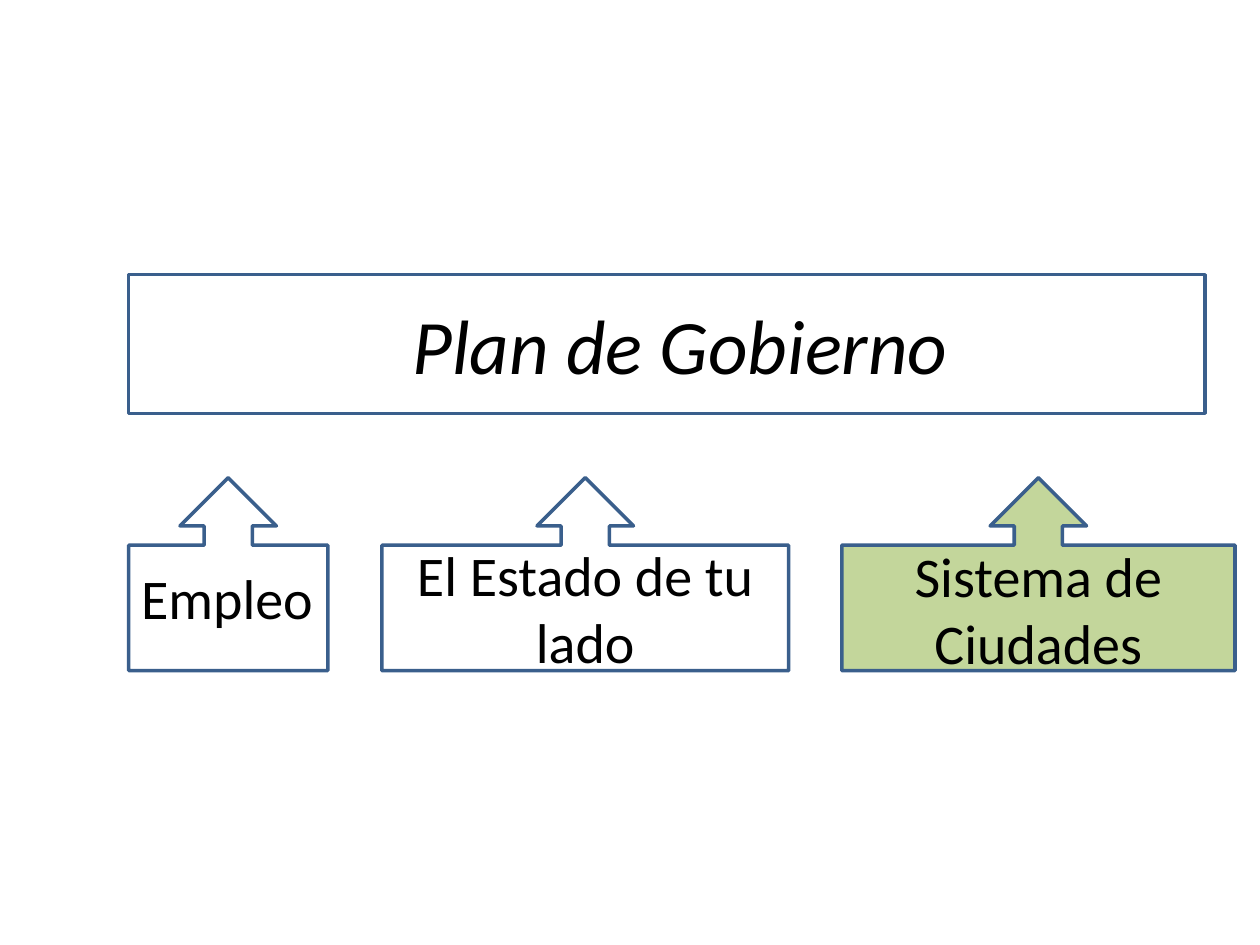
from pptx import Presentation
from pptx.dml.color import RGBColor
from pptx.enum.shapes import MSO_SHAPE
from pptx.enum.text import MSO_AUTO_SIZE, PP_ALIGN
from pptx.util import Pt

WHITE = RGBColor(0xFF, 0xFF, 0xFF)
BLACK = RGBColor(0x00, 0x00, 0x00)
GREEN = RGBColor(0xC3, 0xD6, 0x9B)
BLUE = RGBColor(0x3A, 0x5F, 0x8C)

presentation = Presentation()
presentation.slide_width = Pt(720)
presentation.slide_height = Pt(540)
slide = presentation.slides.add_slide(presentation.slide_layouts[6])


def add_outline(kind, left, top, width, height, fill):
    shape = slide.shapes.add_shape(kind, Pt(left), Pt(top), Pt(width), Pt(height))
    shape.shadow.inherit = False
    shape.fill.solid()
    shape.fill.fore_color.rgb = fill
    shape.line.color.rgb = BLUE
    shape.line.width = Pt(2)


def add_label(text, left, top, width, height, size, wrap=True, italic=False):
    text_box = slide.shapes.add_textbox(Pt(left), Pt(top), Pt(width), Pt(height))
    frame = text_box.text_frame
    frame.word_wrap = wrap
    frame.auto_size = MSO_AUTO_SIZE.SHAPE_TO_FIT_TEXT
    paragraph = frame.paragraphs[0]
    paragraph.text = text
    paragraph.alignment = PP_ALIGN.CENTER if wrap else PP_ALIGN.LEFT
    paragraph.font.name = "Calibri"
    paragraph.font.size = Pt(size)
    paragraph.font.italic = italic
    paragraph.font.color.rgb = BLACK


# Government plan on top
add_outline(MSO_SHAPE.RECTANGLE, 73.5, 157, 615, 79.2, WHITE)
add_label("Plan de Gobierno", 198.7, 166.3, 380, 60.5, 44, italic=True)

# Pillars pointing up to the plan: text, left, width, fill, label top, label height, wrap
pillars = [
    ("Empleo", 73.5, 113.8, WHITE, 318.2, 46, False),
    ("El Estado de tu lado", 218.2, 232.5, WHITE, 305.3, 85, True),
    ("Sistema de Ciudades", 481, 224.7, GREEN, 306, 85, True),
]
for text, left, width, fill, label_top, label_height, wrap in pillars:
    add_outline(MSO_SHAPE.UP_ARROW_CALLOUT, left, 273, width, 110.2, fill)
    add_label(text, left, label_top, width, label_height, 32, wrap=wrap)

presentation.save("out.pptx")
